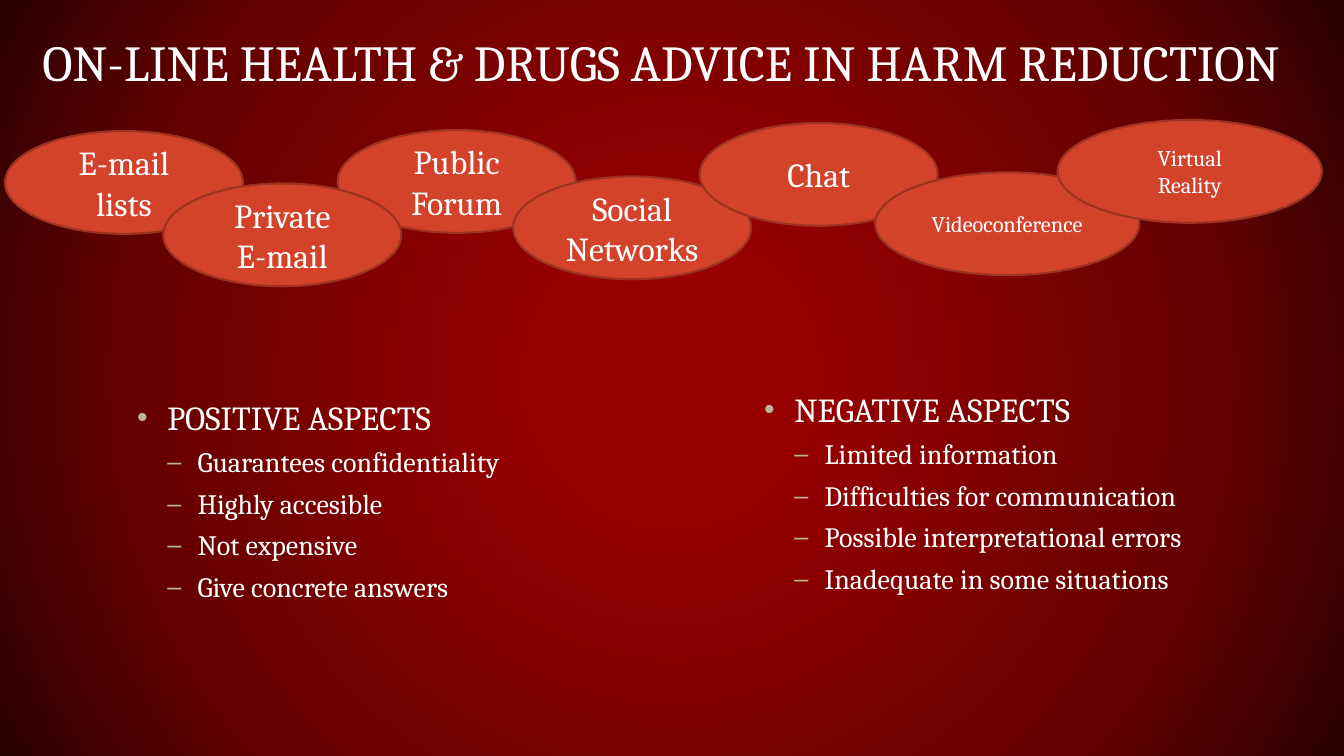
"""Builds the slide on on-line health and drugs advice."""
import dataclasses

import lxml.etree
import pptx
import pptx.dml.color
import pptx.enum.shapes
import pptx.enum.text
import pptx.oxml
import pptx.oxml.ns
import pptx.util
from pptx.util import Inches


@dataclasses.dataclass(frozen=True)
class Theme:
    """Holds the colours, type sizes and font."""
    font: str = "Cambria"
    text: str = "FFFFFF"
    oval: str = "D3432B"
    edge: str = "9C3220"
    mark: str = "BCB49E"
    glow: tuple = ((17, "960000"), (71, "650000"), (100, "290000"))
    title: int = 36
    large: int = 24
    mid: int = 20
    small: int = 16


THEME = Theme()
ALIGN = pptx.enum.text.PP_ALIGN
ANCHOR = pptx.enum.text.MSO_ANCHOR

OVALS = [
    (0.05, 1.3, 2.36, THEME.large, "E-mail lists"),
    (3.35, 1.29, 2.36, THEME.large, "Public\nForum"),
    (1.62, 1.82, 2.36, THEME.large, "Private\nE-mail"),
    (5.09, 1.75, 2.36, THEME.large, "Social\nNetworks"),
    (6.94, 1.22, 2.36, THEME.large, "Chat"),
    (8.68, 1.71, 2.62, THEME.small, "Videoconference"),
    (10.49, 1.19, 2.62, THEME.small, "Virtual\nReality"),
]
LISTS = [
    (1.23, 3.91, "POSITIVE ASPECTS", [
        "Guarantees confidentiality", "Highly accesible",
        "Not expensive", "Give concrete answers"]),
    (7.45, 3.83, "NEGATIVE ASPECTS", [
        "Limited information", "Difficulties for communication",
        "Possible interpretational errors", "Inadequate in some situations"]),
]


def color(code):
    """Turns a hex code into a colour."""
    return pptx.dml.color.RGBColor.from_string(code)


def style(para, size, align):
    """Formats the runs and alignment of a paragraph."""
    para.alignment = align
    for run in para.runs:
        run.font.name = THEME.font
        run.font.size = pptx.util.Pt(size)
        run.font.color.rgb = color(THEME.text)


def inset(frame):
    """Sets the wrapping and margins of a text frame."""
    frame.word_wrap = True
    frame.auto_size = pptx.enum.text.MSO_AUTO_SIZE.NONE
    frame.margin_left = frame.margin_right = Inches(0.13)
    frame.margin_top = frame.margin_bottom = Inches(0.07)


def paint(slide):
    """Gives the slide a round gradient background."""
    slide.background.fill.solid()
    stops = "".join(
        f'<a:gs pos="{pos * 1000}"><a:srgbClr val="{code}"/></a:gs>'
        for pos, code in THEME.glow)
    grad = pptx.oxml.parse_xml(
        f'<a:gradFill {pptx.oxml.ns.nsdecls("a")} rotWithShape="1">'
        f'<a:gsLst>{stops}</a:gsLst><a:path path="circle">'
        '<a:fillToRect l="50000" t="50000" r="50000" b="50000"/>'
        '</a:path></a:gradFill>')
    solid = slide.element.find(".//" + pptx.oxml.ns.qn("a:solidFill"))
    solid.getparent().replace(solid, grad)


def head(slide, text):
    """Places and formats the title."""
    title = slide.shapes.title
    title.left, title.top = Inches(0.29), Inches(-0.34)
    title.width, title.height = Inches(13.31), Inches(1.33)
    frame = title.text_frame
    inset(frame)
    frame.vertical_anchor = ANCHOR.BOTTOM
    frame.text = text
    para = frame.paragraphs[0]
    para.line_spacing = 0.9
    style(para, THEME.title, ALIGN.LEFT)


def oval(slide, left, top, width, size, text):
    """Adds a labelled ellipse."""
    shape = slide.shapes.add_shape(
        pptx.enum.shapes.MSO_SHAPE.OVAL,
        Inches(left), Inches(top), Inches(width), Inches(1.02))
    shape.shadow.inherit = False
    shape.fill.solid()
    shape.fill.fore_color.rgb = color(THEME.oval)
    shape.line.color.rgb = color(THEME.edge)
    shape.line.width = pptx.util.Pt(1.5)
    frame = shape.text_frame
    frame.word_wrap = True
    frame.vertical_anchor = ANCHOR.MIDDLE
    frame.text = text
    for para in frame.paragraphs:
        style(para, size, ALIGN.CENTER)


def bullet(para, level):
    """Gives a paragraph its bullet, indent and spacing."""
    para.level = level
    para.line_spacing = 0.9
    para.space_before = pptx.util.Pt(8 if level else 16)
    props = para._p.get_or_add_pPr()
    props.set("marL", str(Inches(0.3 * (level + 1))))
    props.set("indent", str(Inches(-0.3)))
    qn = pptx.oxml.ns.qn
    tint = lxml.etree.SubElement(props, qn("a:buClr"))
    lxml.etree.SubElement(tint, qn("a:srgbClr"), val=THEME.mark)
    lxml.etree.SubElement(props, qn("a:buSzPct"), val="90000")
    lxml.etree.SubElement(props, qn("a:buFont"), typeface="Arial")
    lxml.etree.SubElement(props, qn("a:buChar"), char="–" if level else "•")


def points(slide, left, top, name, items):
    """Adds a heading with a bulleted list below it."""
    box = slide.shapes.add_textbox(
        Inches(left), Inches(top), Inches(5.44), Inches(4.89))
    frame = box.text_frame
    inset(frame)
    frame.text = "\n".join([name, *items])
    for row, para in enumerate(frame.paragraphs):
        bullet(para, 1 if row else 0)
        style(para, THEME.mid if row else THEME.large, ALIGN.LEFT)


def main():
    """Builds and saves the slide."""
    deck = pptx.Presentation()
    deck.slide_width, deck.slide_height = Inches(13.33), Inches(7.5)
    slide = deck.slides.add_slide(deck.slide_layouts[5])
    paint(slide)
    head(slide, "ON-LINE HEALTH & DRUGS ADVICE IN HARM REDUCTION")
    for part in LISTS:
        points(slide, *part)
    for part in OVALS:
        oval(slide, *part)
    deck.save("out.pptx")


if __name__ == "__main__":
    main()
